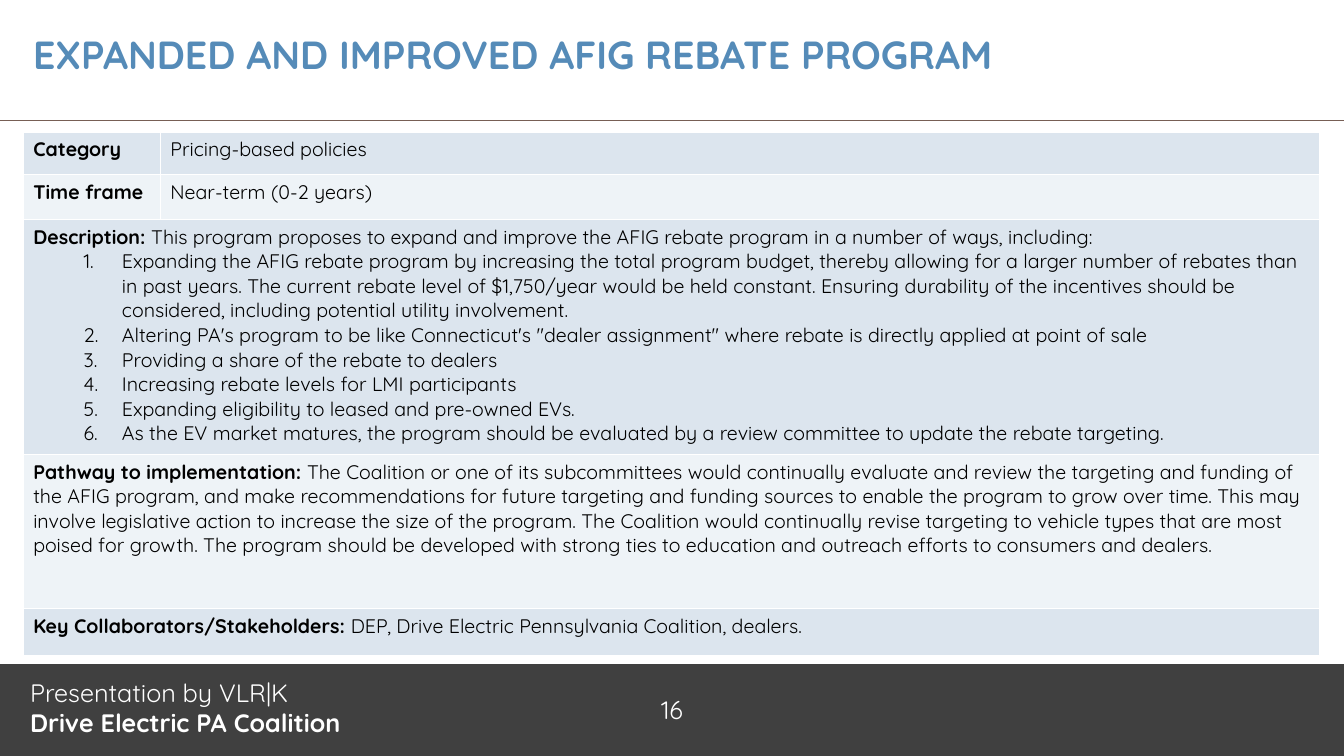
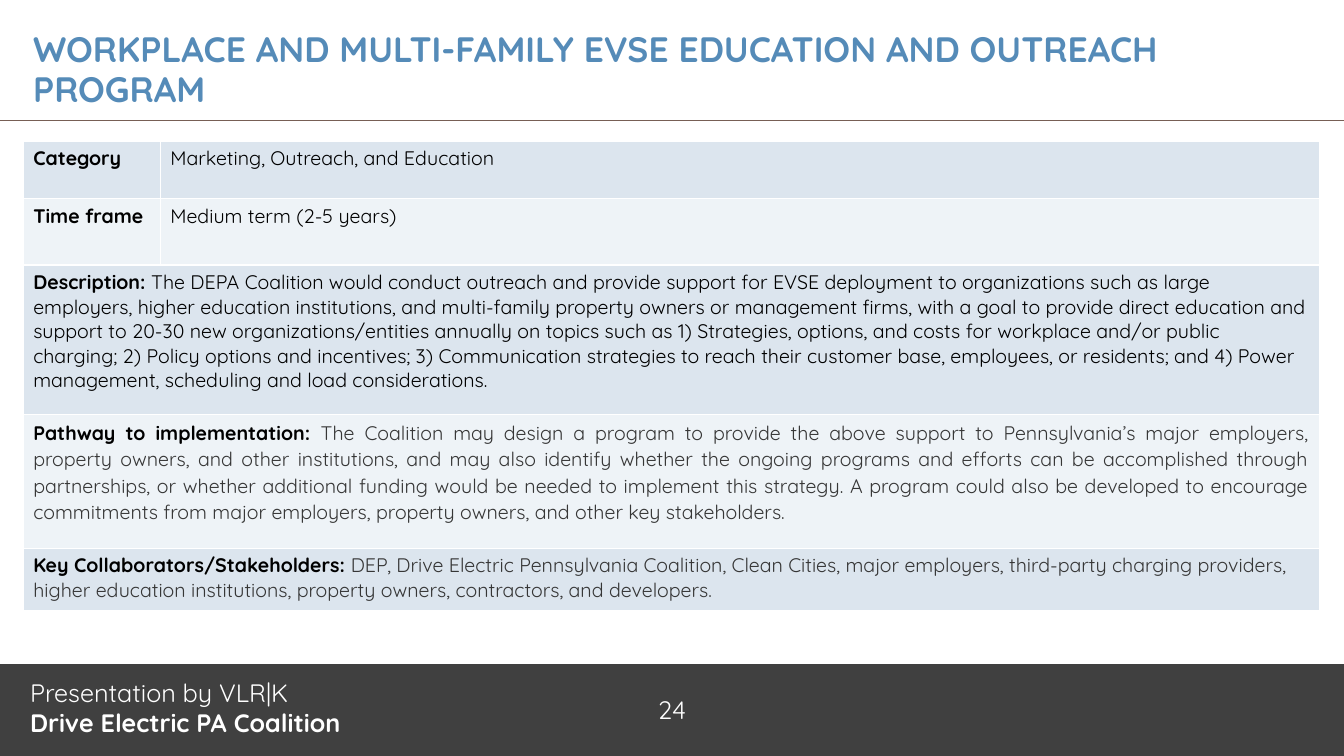
from pptx import Presentation
from pptx.dml.color import RGBColor
from pptx.enum.shapes import MSO_CONNECTOR, MSO_SHAPE
from pptx.enum.text import MSO_ANCHOR, PP_ALIGN
from pptx.oxml import parse_xml
from pptx.oxml.ns import nsdecls
from pptx.util import Inches, Pt

FONT = "Quicksand"
WHITE, BLACK, GREY = "FFFFFF", "000000", "363636"
TITLE_BLUE, RULE_BROWN, FOOTER_GREY = "558BB8", "775F55", "404040"
BANDS = ["DCE5EE", "EEF3F7"]
WIDTH, HEIGHT, FOOTER_TOP = 13.33, 7.5, 6.58
COLUMNS = [1.36, 11.5]
FOOTER = [("Presentation by VLR|K", False), ("Drive Electric PA Coalition", True)]
JUSTIFIED = dict(color=GREY, alignment=PP_ALIGN.JUSTIFY, line_spacing=1.07, space_after=4)

SLIDES = [
    dict(
        number="16",
        title="EXPANDED AND IMPROVED AFIG REBATE PROGRAM",
        title_format=dict(size=28),
        top=1.31,
        heights=[0.42, 0.45, 2.33, 1.53, 0.46],
        facts=[("Category", "Pricing-based policies"), ("Time frame", "Near-term (0-2 years)")],
        sections=[
            ("Description: ",
             "This program proposes to expand and improve the AFIG rebate program in a number of ways, including:",
             {},
             ["Expanding the AFIG rebate program by increasing the total program budget, thereby allowing for a "
              "larger number of rebates than in past years. The current rebate level of $1,750/year would be held "
              "constant. Ensuring durability of the incentives should be considered, including potential utility "
              "involvement.",
              "Altering PA's program to be like Connecticut's \"dealer assignment\" where rebate is directly "
              "applied at point of sale",
              "Providing a share of the rebate to dealers",
              "Increasing rebate levels for LMI participants",
              "Expanding eligibility to leased and pre-owned EVs.",
              "As the EV market matures, the program should be evaluated by a review committee to update the "
              "rebate targeting."]),
            ("Pathway to implementation: ",
             "The Coalition or one of its subcommittees would continually evaluate and review the targeting and "
             "funding of the AFIG program, and make recommendations for future targeting and funding sources to "
             "enable the program to grow over time. This may involve legislative action to increase the size of "
             "the program. The Coalition would continually revise targeting to vehicle types that are most poised "
             "for growth. The program should be developed with strong ties to education and outreach efforts to "
             "consumers and dealers.",
             {}, []),
            ("Key Collaborators/Stakeholders: ",
             "DEP, Drive Electric Pennsylvania Coalition, dealers.",
             {}, []),
        ],
    ),
    dict(
        number="24",
        title="WORKPLACE AND MULTI-FAMILY EVSE EDUCATION AND OUTREACH PROGRAM",
        title_format=dict(size=25.2, line_spacing=0.95),
        top=1.4,
        heights=[0.57, 0.66, 1.48, 1.33, 0.62],
        facts=[("Category", "Marketing, Outreach, and Education"), ("Time frame", "Medium term (2-5 years)")],
        sections=[
            ("Description: ",
             "The DEPA Coalition would conduct outreach and provide support for EVSE deployment to organizations "
             "such as large employers, higher education institutions, and multi-family property owners or "
             "management firms, with a goal to provide direct education and support to 20-30 new "
             "organizations/entities annually on topics such as 1) Strategies, options, and costs for workplace "
             "and/or public charging; 2) Policy options and incentives; 3) Communication strategies to reach "
             "their customer base, employees, or residents; and 4) Power management, scheduling and load "
             "considerations.",
             {}, []),
            ("Pathway to implementation: ",
             "The Coalition may design a program to provide the above support to Pennsylvania’s major employers, "
             "property owners, and other institutions, and may also identify whether the ongoing programs and "
             "efforts can be accomplished through partnerships, or whether additional funding would be needed to "
             "implement this strategy. A program could also be developed to encourage commitments from major "
             "employers, property owners, and other key stakeholders.",
             JUSTIFIED, []),
            ("Key Collaborators/Stakeholders: ",
             "DEP, Drive Electric Pennsylvania Coalition, Clean Cities, major employers, third-party charging "
             "providers, higher education institutions, property owners, contractors, and developers.",
             dict(color=GREY), []),
        ],
    ),
]


def rgb(color):
    return RGBColor.from_string(color)


def write(frame, text, label="", size=14, color=BLACK, bold=False, alignment=PP_ALIGN.LEFT,
          line_spacing=None, space_after=None, numbered=False):
    paragraph = frame.add_paragraph() if frame.text else frame.paragraphs[0]
    paragraph.alignment = alignment
    if line_spacing:
        paragraph.line_spacing = line_spacing
    if space_after:
        paragraph.space_after = Pt(space_after)
    if numbered:
        paragraph.level = 1
        properties = paragraph._p.get_or_add_pPr()
        properties.set("marL", str(Inches(0.88)))
        properties.set("indent", str(Inches(-0.38)))
        properties.append(parse_xml(f'<a:buFont {nsdecls("a")} typeface="+mj-lt"/>'))
        properties.append(parse_xml(f'<a:buAutoNum {nsdecls("a")} type="arabicPeriod"/>'))
    for part, part_bold, part_color in [(label, True, BLACK), (text, bold, color)]:
        if part:
            run = paragraph.add_run()
            run.text = part
            run.font.name = FONT
            run.font.size = Pt(size)
            run.font.bold = part_bold
            run.font.color.rgb = rgb(part_color)


def add_text_box(slide, left, top, width, height):
    frame = slide.shapes.add_textbox(Inches(left), Inches(top), Inches(width), Inches(height)).text_frame
    frame.word_wrap = True
    return frame


def add_rule(slide, top, color):
    rule = slide.shapes.add_connector(MSO_CONNECTOR.STRAIGHT, 0, Inches(top), Inches(WIDTH), Inches(top))
    rule.line.color.rgb = rgb(color)
    rule.line.width = Pt(0.75)
    rule._element.spPr.append(parse_xml(f'<a:effectLst {nsdecls("a")}/>'))


def add_frame(slide, number):
    band = slide.shapes.add_shape(MSO_SHAPE.RECTANGLE, 0, Inches(FOOTER_TOP),
                                  Inches(WIDTH), Inches(HEIGHT - FOOTER_TOP))
    band.shadow.inherit = False
    band.fill.solid()
    band.fill.fore_color.rgb = rgb(FOOTER_GREY)
    band.line.fill.background()
    band.text_frame.vertical_anchor = MSO_ANCHOR.MIDDLE
    write(band.text_frame, number, size=18, color=WHITE, alignment=PP_ALIGN.CENTER)
    add_rule(slide, FOOTER_TOP, WHITE)
    footer = add_text_box(slide, 0.2, 6.67, 4.89, 0.7)
    for text, bold in FOOTER:
        write(footer, text, size=18, color=WHITE, bold=bold)
    add_rule(slide, 1.2, RULE_BROWN)


def style_cell(cell, color):
    properties = cell._tc.get_or_add_tcPr()
    for side in ("lnL", "lnR", "lnT", "lnB"):
        properties.append(parse_xml(
            f'<a:{side} {nsdecls("a")} w="{Pt(1)}"><a:solidFill><a:srgbClr val="{WHITE}"/>'
            f'</a:solidFill></a:{side}>'))
    cell.fill.solid()
    cell.fill.fore_color.rgb = rgb(color)


def add_policy_table(slide, top, heights, facts, sections):
    table = slide.shapes.add_table(len(heights), len(COLUMNS), Inches(0.23), Inches(top),
                                   Inches(sum(COLUMNS)), Inches(sum(heights))).table
    table.first_row = table.horz_banding = False
    for column, width in zip(table.columns, COLUMNS):
        column.width = Inches(width)
    for index, height in enumerate(heights):
        table.rows[index].height = Inches(height)
        for cell in table.rows[index].cells:
            style_cell(cell, BANDS[index % 2])
    for row, (name, value) in enumerate(facts):
        write(table.cell(row, 0).text_frame, name, bold=True)
        write(table.cell(row, 1).text_frame, value)
    for row, (label, text, text_format, items) in enumerate(sections, len(facts)):
        cell = table.cell(row, 0)
        cell.merge(table.cell(row, 1))
        write(cell.text_frame, text, label=label, **text_format)
        for item in items:
            write(cell.text_frame, item, numbered=True)


def main():
    presentation = Presentation()
    presentation.slide_width = Inches(WIDTH)
    presentation.slide_height = Inches(HEIGHT)
    for content in SLIDES:
        slide = presentation.slides.add_slide(presentation.slide_layouts[6])
        add_frame(slide, content["number"])
        title = add_text_box(slide, 0.23, 0.25, 12.67, 0.66)
        write(title, content["title"], color=TITLE_BLUE, bold=True, **content["title_format"])
        add_policy_table(slide, content["top"], content["heights"], content["facts"], content["sections"])
    presentation.save("out.pptx")


if __name__ == "__main__":
    main()
